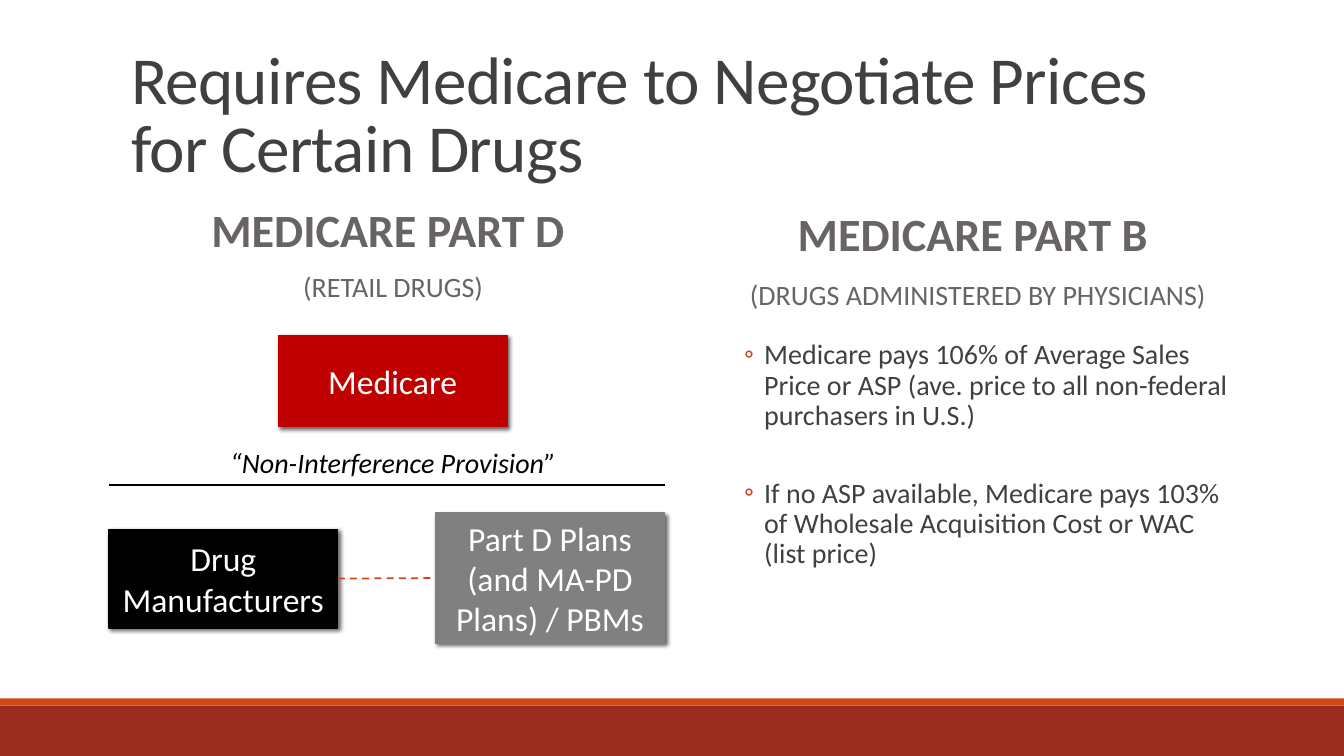
from dataclasses import dataclass

from lxml.etree import SubElement
from pptx import Presentation
from pptx.dml.color import RGBColor
from pptx.enum.dml import MSO_LINE
from pptx.enum.shapes import MSO_CONNECTOR, MSO_SHAPE
from pptx.enum.text import MSO_ANCHOR, MSO_AUTO_SIZE, PP_ALIGN
from pptx.oxml.ns import qn
from pptx.util import Inches, Pt


@dataclass(frozen=True)
class Theme:
    font: str = "Calibri"
    text: str = "404040"
    heading: str = "696464"
    accent: str = "D34817"
    footer: str = "9B2D1F"
    red: str = "C00000"
    gray: str = "808080"
    black: str = "000000"
    white: str = "FFFFFF"
    title_size: int = 48
    heading_size: int = 33
    box_size: int = 24
    body_size: int = 20


THEME = Theme()


def rgb(color):
    return RGBColor.from_string(color)


def style(para, size, color, bold=False, italic=False):
    font = para.font
    font.name, font.size = THEME.font, Pt(size)
    font.bold, font.italic = bold, italic
    font.color.rgb = rgb(color)


def add_text_area(page, left, top, width, height, anchor=MSO_ANCHOR.TOP):
    box = page.shapes.add_textbox(Inches(left), Inches(top), Inches(width), Inches(height))
    frame = box.text_frame
    frame.word_wrap = True
    frame.vertical_anchor = anchor
    return frame


def add_rectangle(page, left, top, width, height, color):
    box = page.shapes.add_shape(
        MSO_SHAPE.RECTANGLE, Inches(left), Inches(top), Inches(width), Inches(height))
    box.shadow.inherit = False
    box.fill.solid()
    box.fill.fore_color.rgb = rgb(color)
    box.line.fill.background()
    return box


def add_drop_shadow(box):
    effects = box._element.spPr.find(qn("a:effectLst"))
    shadow = SubElement(effects, qn("a:outerShdw"), blurRad=str(Pt(3)), dist=str(Pt(2)),
                        dir=str(45 * 60000), algn="tl", rotWithShape="0")
    color = SubElement(shadow, qn("a:srgbClr"), val=THEME.black)
    SubElement(color, qn("a:alpha"), val="60000")


def add_party(page, text, left, top, height, color):
    """Add a labelled, shadowed box for one party to the negotiation."""
    box = add_rectangle(page, left, top, 2.27, height, color)
    box.line.color.rgb = rgb(color)
    box.line.width = Pt(1)
    add_drop_shadow(box)
    frame = box.text_frame
    frame.word_wrap = True
    frame.vertical_anchor = MSO_ANCHOR.MIDDLE
    para = frame.paragraphs[0]
    para.text = text
    para.alignment = PP_ALIGN.CENTER
    style(para, THEME.box_size, THEME.white)
    return box


def add_line(page, start, end, color):
    line = page.shapes.add_connector(
        MSO_CONNECTOR.STRAIGHT, *(Inches(value) for value in start + end))
    line.line.color.rgb = rgb(color)
    line.line.width = Pt(1.25)
    SubElement(line._element.spPr, qn("a:effectLst"))
    return line


def set_title(page, text):
    title = page.shapes.title
    title.left, title.top = Inches(1.2), Inches(0.31)
    title.width, title.height = Inches(11), Inches(1.59)
    frame = title.text_frame
    frame.auto_size = MSO_AUTO_SIZE.NONE
    frame.vertical_anchor = MSO_ANCHOR.BOTTOM
    para = frame.paragraphs[0]
    para.text = text
    para.alignment = PP_ALIGN.LEFT
    para.line_spacing = 0.85
    style(para, THEME.title_size, THEME.text)
    para.runs[0].font._element.set("spc", "-50")


def add_heading(page, left, height, line_spacing, name, scope):
    frame = add_text_area(page, left, 2.02, 5.4, height, MSO_ANCHOR.MIDDLE)
    first, second = frame.paragraphs[0], frame.add_paragraph()
    first.text, second.text = name, scope
    for para in (first, second):
        para.alignment = PP_ALIGN.CENTER
        para.line_spacing = line_spacing
        para.space_after = Pt(2)
    second.space_before = Pt(12)
    style(first, THEME.heading_size, THEME.heading, bold=True)
    style(second, THEME.body_size, THEME.heading)


def add_bullets(page, items):
    frame = add_text_area(page, 7.16, 3.33, 5.07, 3.19)
    frame.margin_left = frame.margin_right = 0
    for index, item in enumerate(items):
        para = frame.add_paragraph() if index else frame.paragraphs[0]
        para.text = item
        para.line_spacing = 0.9
        para.space_after = Pt(34)
        properties = para._p.get_or_add_pPr()
        properties.set("marL", str(Inches(0.42)))
        properties.set("indent", str(Inches(-0.2)))
        bullet_color = SubElement(properties, qn("a:buClr"))
        SubElement(bullet_color, qn("a:srgbClr"), val=THEME.accent)
        SubElement(properties, qn("a:buFont"), typeface=THEME.font)
        SubElement(properties, qn("a:buChar"), char="◦")
        style(para, THEME.body_size, THEME.text)


def add_part_d_diagram(page):
    add_party(page, "Medicare", 2.76, 3.33, 0.9, THEME.red)
    makers = add_party(page, "Drug Manufacturers", 1.08, 5.25, 0.98, THEME.black)
    plans = add_party(page, "Part D Plans (and MA-PD Plans) / PBMs", 4.32, 5.09, 1.29, THEME.gray)

    link = add_line(page, (3.35, 5.74), (4.32, 5.74), THEME.accent)
    link.line.dash_style = MSO_LINE.DASH
    link.begin_connect(makers, 3)
    link.end_connect(plans, 1)

    para = add_text_area(page, 1.87, 4.37, 4.06, 0.44).paragraphs[0]
    para.text = "“Non-Interference Provision”"
    para.alignment = PP_ALIGN.CENTER
    style(para, THEME.body_size, THEME.black, italic=True)
    add_line(page, (1.08, 4.81), (6.6, 4.81), THEME.black)


def main():
    deck = Presentation()
    deck.slide_width, deck.slide_height = Inches(13.33), Inches(7.5)
    page = deck.slides.add_slide(deck.slide_layouts[5])

    add_rectangle(page, 0, 7, 13.33, 0.5, THEME.footer)
    add_rectangle(page, 0, 6.93, 13.33, 0.07, THEME.accent)
    set_title(page, "Requires Medicare to Negotiate Prices for Certain Drugs")
    add_heading(page, 1.2, 1.06, 0.8, "MEDICARE PART D ", "(RETAIL DRUGS)")
    add_heading(page, 7, 1.15, 0.9, "MEDICARE PART B ", "(DRUGS ADMINISTERED BY PHYSICIANS)")
    add_part_d_diagram(page)
    add_bullets(page, [
        "Medicare pays 106% of Average Sales Price or ASP "
        "(ave. price to all non-federal purchasers in U.S.)",
        "If no ASP available, Medicare pays 103% of Wholesale Acquisition Cost "
        "or WAC (list price)",
    ])
    deck.save("out.pptx")


if __name__ == "__main__":
    main()
